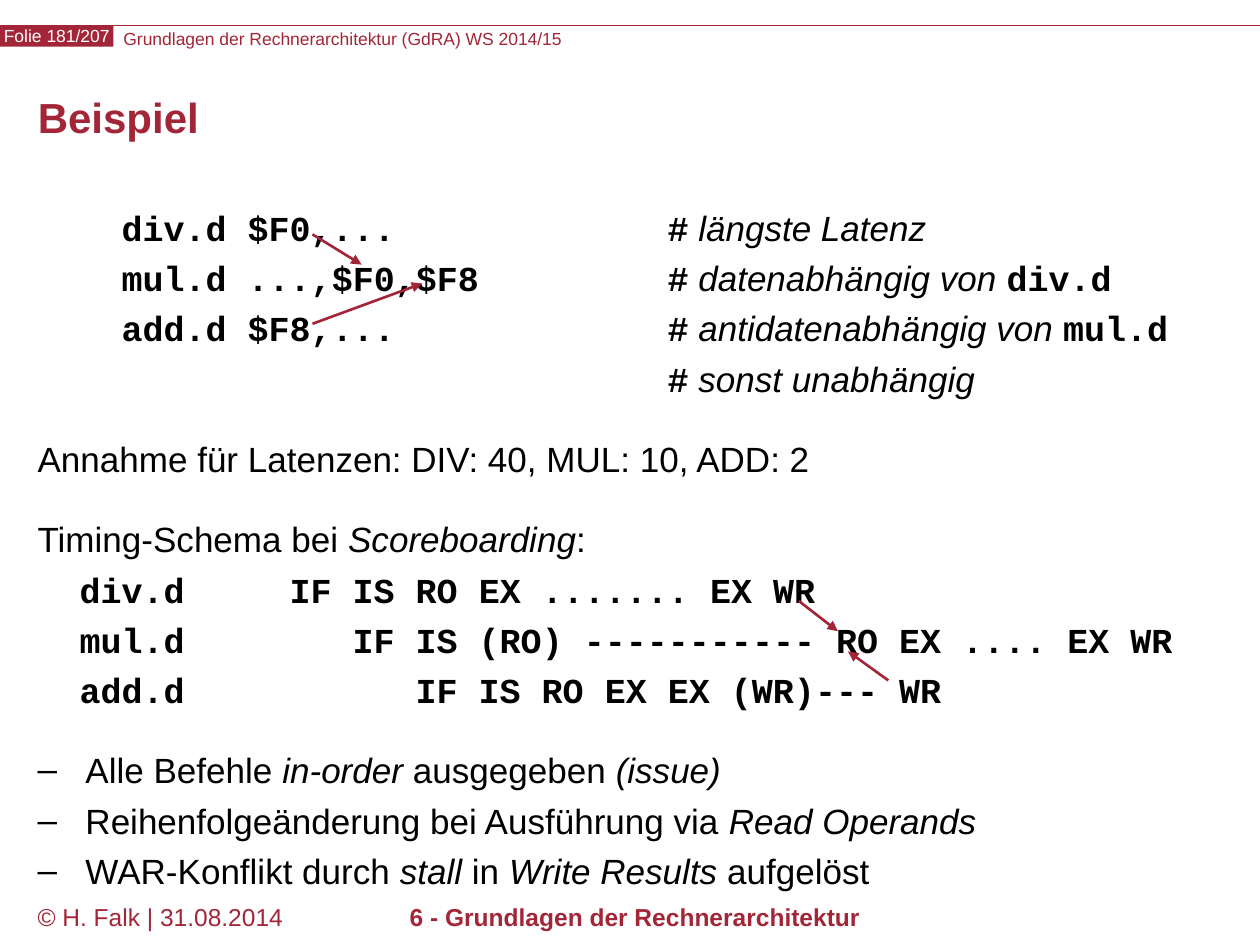
from pptx import Presentation
from pptx import util as u
from pptx.dml.color import RGBColor
from pptx.enum import shapes, text
from pptx.oxml.ns import qn
from lxml import etree

WIDTH, HEIGHT = 10, 7.5
RED, BLACK, WHITE = "A32638", "000000", "FFFFFF"
SANS, MONO = "Arial", "Courier New"
CHAR = 1 / 6  # advance of one 20 pt Courier New character, in inches
PLAIN = {"name": SANS, "size": u.Pt(20), "bold": False, "italic": False}
STYLES = {
    "plain": PLAIN,
    "italic": {**PLAIN, "italic": True},
    "code": {**PLAIN, "name": MONO, "bold": True},
}


def colour(value):
    return RGBColor.from_string(value)


def apply(target, values):
    for key, value in values.items():
        setattr(target, key, value)


def inches(*lengths):
    return [u.Inches(length) for length in lengths]


def add_span(para, words, font, tint):
    span = para.add_run()
    span.text = words
    apply(span.font, font)
    span.font.color.rgb = colour(tint)


def add_child(parent, tag, **attributes):
    child = etree.SubElement(parent, qn(tag))
    for key, value in attributes.items():
        child.set(key, str(value))
    return child


def set_tabs(para, stops):
    tabs = add_child(para._p.get_or_add_pPr(), "a:tabLst")
    for stop in stops:
        add_child(tabs, "a:tab", pos=u.Inches(stop), algn="l")


def set_dash(para):
    props = para._p.get_or_add_pPr()
    props.set("marL", str(u.Inches(0.38)))
    props.set("indent", str(-u.Inches(0.38)))
    add_child(props, "a:buFont", typeface=SANS)
    add_child(props, "a:buChar", char="–")


def add_line(page, start, end, weight, arrow=False):
    line = page.shapes.add_connector(
        shapes.MSO_CONNECTOR.STRAIGHT, *inches(*start, *end))
    line.line.color.rgb = colour(RED)
    line.line.width = u.Pt(weight)
    if arrow:
        add_child(line.line._get_or_add_ln(), "a:tailEnd", type="triangle")
    add_child(line._element.spPr, "a:effectLst")


def add_label(page, box, words, font, align=text.PP_ALIGN.LEFT, inset=True):
    frame = page.shapes.add_textbox(*inches(*box)).text_frame
    frame.word_wrap = True
    if not inset:
        apply(frame, dict.fromkeys(
            ("margin_left", "margin_top", "margin_right", "margin_bottom"), 0))
    para = frame.paragraphs[0]
    para.alignment = align
    add_span(para, words, {"name": SANS, **font}, RED)


def add_header(page, left, top, width, height):
    add_line(page, (left, top), (left + width, top), 0.75)
    add_label(page, (left + 0.98, top + 0.02, 0.66 * width, height),
              "Grundlagen der Rechnerarchitektur (GdRA) WS 2014/15",
              {"size": u.Pt(10)}, inset=False)
    # Page counter
    counter = page.shapes.add_shape(
        shapes.MSO_SHAPE.RECTANGLE, *inches(left, top, 0.09 * width, height))
    counter.shadow.inherit = False
    counter.fill.solid()
    counter.fill.fore_color.rgb = colour(RED)
    counter.line.fill.background()
    apply(counter.text_frame, {
        "margin_left": 0, "margin_top": 0, "margin_right": 0,
        "margin_bottom": 0, "word_wrap": False,
        "vertical_anchor": text.MSO_ANCHOR.MIDDLE})
    para = counter.text_frame.paragraphs[0]
    para.alignment = text.PP_ALIGN.CENTER
    add_span(para, "Folie 181/207", {"name": SANS, "size": u.Pt(10)}, WHITE)


def add_title(page, left, top, width, height):
    title = page.shapes.title
    apply(title, dict(zip(("left", "top", "width", "height"),
                          inches(left, top, width, height))))
    title.text_frame.vertical_anchor = text.MSO_ANCHOR.MIDDLE
    para = title.text_frame.paragraphs[0]
    apply(para, {"alignment": text.PP_ALIGN.LEFT, "line_spacing": u.Pt(24)})
    add_span(para, "Beispiel",
             {"name": SANS, "size": u.Pt(24), "bold": True}, RED)


def add_body(page, left, top, width, height):
    frame = page.shapes.add_textbox(*inches(left, top, width, height)).text_frame
    frame.word_wrap = True
    listing, timing = (4, 30), (2, 12)  # tab stops in characters
    # Each row: gap before it, tab stops or dash, spans
    rows = [
        (0, listing, [("code", "\tdiv.d $F0,...\t#"), ("italic", " längste Latenz")]),
        (0, listing, [("code", "\tmul.d ...,$F0,$F8\t#"),
                      ("italic", " datenabhängig von "), ("code", "div.d")]),
        (0, listing, [("code", "\tadd.d $F8,...\t#"),
                      ("italic", " antidatenabhängig von "), ("code", "mul.d")]),
        (0, listing[1:], [("code", "\t#"), ("italic", " sonst unabhängig")]),
        (17, (), [("plain", "Annahme für Latenzen: DIV: 40, MUL: 10, ADD: 2")]),
        (17, (), [("plain", "Timing-Schema bei "), ("italic", "Scoreboarding"),
                  ("plain", ":")]),
    ]
    stages = [
        ("div.d", "IF IS RO EX ....... EX WR"),
        ("mul.d", "IF IS (RO) ----------- RO EX .... EX WR"),
        ("add.d", "IF IS RO EX EX (WR)--- WR"),
    ]
    for cycle, (name, steps) in enumerate(stages):
        stops = (timing[0], timing[1] + 3 * cycle)
        rows.append((0, stops, [("code", f"\t{name}\t{steps}")]))
    rows += [
        (17, "dash", [("plain", "Alle Befehle "), ("italic", "in-order"),
                      ("plain", " ausgegeben "), ("italic", "(issue)")]),
        (0, "dash", [("plain", "Reihenfolgeänderung bei Ausführung via "),
                     ("italic", "Read Operands")]),
        (0, "dash", [("plain", "WAR-Konflikt durch "), ("italic", "stall"),
                     ("plain", " in "), ("italic", "Write Results"),
                     ("plain", " aufgelöst")]),
    ]
    for index, (gap, layout, spans) in enumerate(rows):
        para = frame.add_paragraph() if index else frame.paragraphs[0]
        apply(para, {"line_spacing": 1.2, "space_before": u.Pt(gap)})
        if layout == "dash":
            set_dash(para)
        elif layout:
            set_tabs(para, [stop * CHAR for stop in layout])
        for style, words in spans:
            add_span(para, words, STYLES[style], BLACK)


def add_dependencies(page):
    for start, end in [((2.48, 1.86), (2.87, 2.1)), ((2.48, 2.57), (3.35, 2.25)),
                       ((6.34, 4.77), (6.65, 5.01)), ((7.05, 5.4), (6.73, 5.17))]:
        add_line(page, start, end, 1.5, arrow=True)


def add_footer(page, left, top, width, height):
    add_label(page, (left, top, 0.22 * width, height),
              "© H. Falk | 31.08.2014", {"size": u.Pt(14)})
    add_label(page, (left + 1.81, top, 0.606 * width, height),
              "6 - Grundlagen der Rechnerarchitektur",
              {"size": u.Pt(14), "bold": True}, text.PP_ALIGN.CENTER)


def main():
    deck = Presentation()
    deck.slide_width, deck.slide_height = inches(WIDTH, HEIGHT)
    page = deck.slides.add_slide(deck.slide_layouts[5])
    margin, column = 0.2, 9.61
    add_header(page, 0, 0.2, WIDTH, 0.17)
    add_footer(page, margin, 7.11, WIDTH, 0.39)
    add_body(page, margin, 1.52, column, 5.46)
    add_title(page, margin, 0.6, column, 0.72)
    add_dependencies(page)
    deck.save("out.pptx")


if __name__ == "__main__":
    main()
